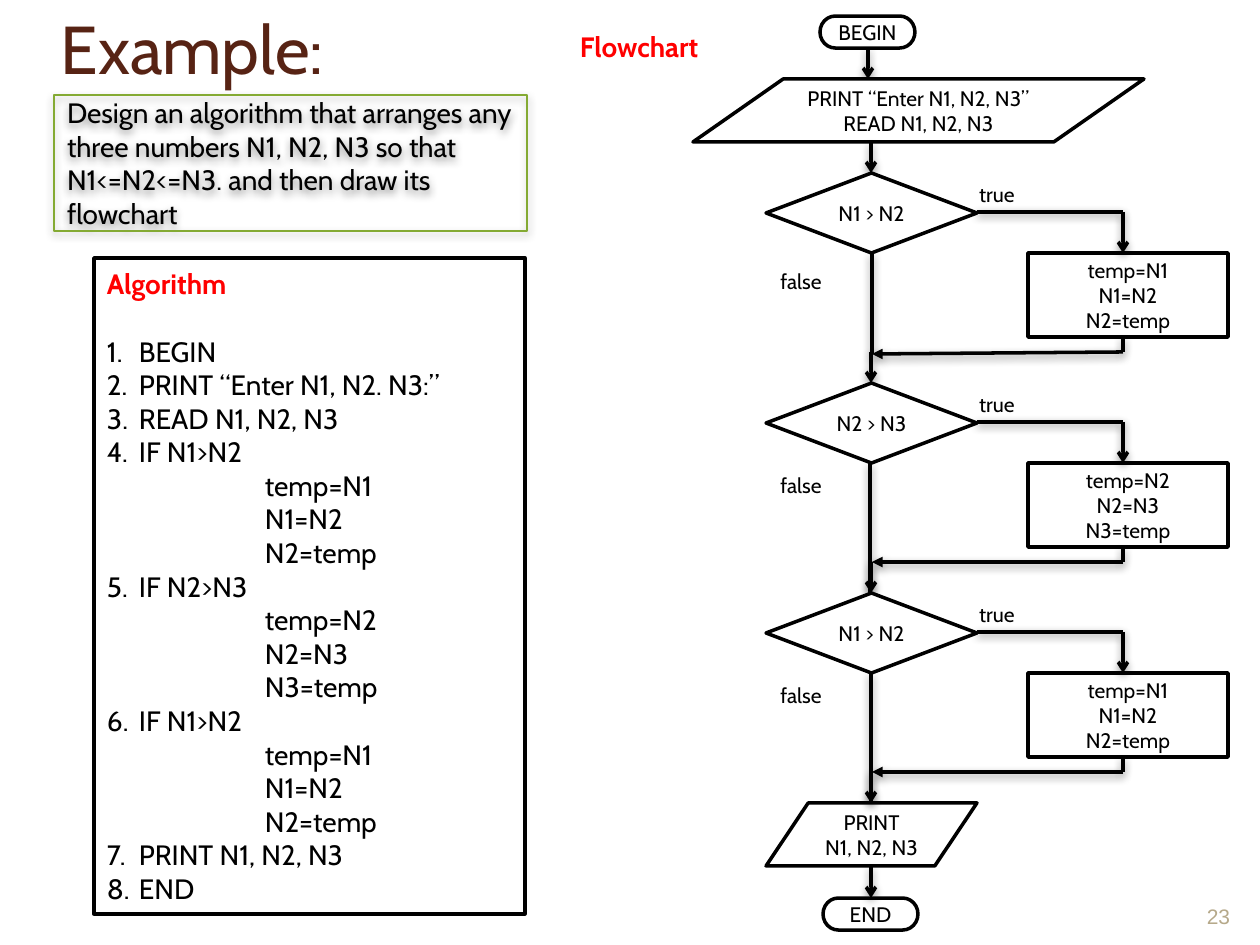
from dataclasses import dataclass

from lxml import etree
from pptx import Presentation
from pptx import util as u
from pptx.dml.color import RGBColor
from pptx.enum import shapes, text
from pptx.oxml.ns import qn

SCALE = u.Inches(1) / 126
BLACK, WHITE, RED = "000000", "FFFFFF", "FF0000"
LEFT, CENTER = text.PP_ALIGN.LEFT, text.PP_ALIGN.CENTER
MIDDLE, BOTTOM = text.MSO_ANCHOR.MIDDLE, text.MSO_ANCHOR.BOTTOM
KIND = shapes.MSO_SHAPE
STEM_X, RETURN_X = 871, 1123
BRANCH_TOP, BRANCH_STEP = 173, 210


@dataclass
class Area:
    left: int
    top: int
    width: int
    height: int


@dataclass
class Style:
    size: float = 12
    color: str = BLACK
    bold: bool = False
    font: str = "Cabin"


@dataclass
class Branch:
    test: str
    swap: list[str]
    false_top: int
    stem_x: int
    stem_end: int
    merge_drop: int


BRANCHES = [
    Branch("N1 > N2", ["temp=N1", "N1=N2", "N2=temp"], 260, 872, 354, 2),
    Branch("N2 > N3", ["temp=N2", "N2=N3", "N3=temp"], 464, 870, 603, 0),
    Branch("N1 > N2", ["temp=N1", "N1=N2", "N2=temp"], 674, 871, 803, 0),
]


def px(length: int) -> u.Emu:
    return u.Emu(round(length * SCALE))


def rgb(color: str) -> RGBColor:
    return RGBColor.from_string(color)


def place(area: Area) -> list[u.Emu]:
    return [px(n) for n in (area.left, area.top, area.width, area.height)]


def add_run(para, words: str, style: Style) -> None:
    span = para.add_run()
    span.text = words
    span.font.name = style.font
    span.font.size = u.Pt(style.size)
    span.font.bold = style.bold
    span.font.color.rgb = rgb(style.color)


def write(box, lines: list[str], style: Style, align=CENTER, anchor=MIDDLE, inset: int = 0) -> None:
    frame = box.text_frame
    frame.word_wrap = True
    frame.vertical_anchor = anchor
    frame.margin_left = frame.margin_right = px(inset)
    for index, line in enumerate(lines):
        para = frame.add_paragraph() if index else frame.paragraphs[0]
        para.alignment = align
        add_run(para, line, style)


def add_label(page, area: Area, words: str, style: Style, align=CENTER, anchor=MIDDLE, inset: int = 0) -> None:
    write(page.shapes.add_textbox(*place(area)), [words], style, align, anchor, inset)


def add_node(page, kind, area: Area, lines: list[str], style: Style = Style(), align=CENTER, inset: int = 0):
    node = page.shapes.add_shape(kind, *place(area))
    node.shadow.inherit = False
    node.fill.solid()
    node.fill.fore_color.rgb = rgb(WHITE)
    node.line.color.rgb = rgb(BLACK)
    node.line.width = u.Pt(2)
    write(node, lines, style, align, inset=inset)
    return node


def add_shadow(item) -> None:
    properties = item._element.spPr
    for old in properties.findall(qn("a:effectLst")):
        properties.remove(old)
    effects = etree.SubElement(properties, qn("a:effectLst"))
    shadow = etree.SubElement(effects, qn("a:outerShdw"), blurRad=str(u.Pt(5)), dist=str(u.Pt(2)),
                              dir="5400000", rotWithShape="0")
    color = etree.SubElement(shadow, qn("a:srgbClr"), val=BLACK)
    etree.SubElement(color, qn("a:alpha"), val="43000")


def add_line(page, start: tuple[int, int], end: tuple[int, int], head: str = "") -> None:
    line = page.shapes.add_connector(shapes.MSO_CONNECTOR.STRAIGHT, *map(px, start + end))
    line.line.color.rgb = rgb(BLACK)
    line.line.width = u.Pt(2)
    if head:
        etree.SubElement(line.line._get_or_add_ln(), qn("a:tailEnd"), type=head)
    add_shadow(line)


def add_branch(page, branch: Branch, top: int) -> None:
    turn, swap_top, merge = top + 39, top + 80, top + 179
    add_node(page, KIND.FLOWCHART_PROCESS, Area(1028, swap_top, 200, 84), branch.swap)
    add_node(page, KIND.FLOWCHART_DECISION, Area(766, top, 211, 80), [branch.test])
    add_line(page, (RETURN_X, turn), (977, turn))
    add_line(page, (RETURN_X, turn), (RETURN_X, swap_top), "arrow")
    add_line(page, (RETURN_X, merge), (872, merge + branch.merge_drop), "triangle")
    add_line(page, (RETURN_X, swap_top + 84), (RETURN_X, merge))
    add_line(page, (branch.stem_x, swap_top), (branch.stem_x, branch.stem_end))
    add_line(page, (STEM_X, merge), (STEM_X, top + BRANCH_STEP), "arrow")
    add_label(page, Area(934, top, 126, 42), "true", Style())
    add_label(page, Area(738, branch.false_top, 126, 42), "false", Style())


def add_flowchart(page) -> None:
    add_label(page, Area(567, 15, 220, 63), "Flowchart", Style(16, RED, True), LEFT, inset=13)
    add_node(page, KIND.FLOWCHART_TERMINATOR, Area(820, 16, 95, 32), ["BEGIN"])
    add_node(page, KIND.FLOWCHART_TERMINATOR, Area(823, 898, 95, 32), ["END"])
    add_line(page, (868, 48), (868, 79), "arrow")
    add_node(page, KIND.FLOWCHART_DATA, Area(693, 79, 451, 63),
             ["PRINT “Enter N1, N2, N3”", "READ N1, N2, N3"])
    add_line(page, (STEM_X, 142), (STEM_X, BRANCH_TOP), "arrow")
    add_node(page, KIND.FLOWCHART_DATA, Area(766, 803, 211, 63), ["PRINT", "N1, N2, N3"])
    add_line(page, (STEM_X, 866), (STEM_X, 898), "arrow")
    for index, branch in enumerate(BRANCHES):
        add_branch(page, branch, BRANCH_TOP + index * BRANCH_STEP)


def add_algorithm(page) -> None:
    box = add_node(page, KIND.RECTANGLE, Area(94, 258, 431, 656), ["Algorithm"],
                   Style(16, RED, True), LEFT, 13)
    box.text_frame.paragraphs[0].space_after = u.Pt(19.2)
    steps = [("BEGIN", []), ("PRINT “Enter N1, N2. N3:”", []), ("READ N1, N2, N3", [])]
    steps += [("IF " + branch.test.replace(" ", ""), branch.swap) for branch in BRANCHES]
    steps += [("PRINT N1, N2, N3", []), ("END", [])]
    for number, (step, actions) in enumerate(steps, 1):
        for words in [step, *actions]:
            para = box.text_frame.add_paragraph()
            para.alignment = LEFT
            settings = para._p.get_or_add_pPr()
            if words == step:
                settings.set("marL", str(px(32)))
                settings.set("indent", str(-px(32)))
                etree.SubElement(settings, qn("a:buFont"), typeface="+mj-lt")
                etree.SubElement(settings, qn("a:buAutoNum"), type="arabicPeriod", startAt=str(number))
            else:
                settings.set("marL", str(px(158)))
            add_run(para, words, Style(16))


def add_task(page) -> None:
    task = ("Design an algorithm that arranges any three numbers N1, N2, N3 "
            "so that N1<=N2<=N3. and then draw its flowchart")
    box = add_node(page, KIND.RECTANGLE, Area(54, 95, 473, 136), [task], Style(16), LEFT, 13)
    box.fill.background()
    box.line.color.rgb = rgb("84AA33")
    box.line.width = u.Pt(0.75)
    add_shadow(box)


def main() -> None:
    deck = Presentation()
    deck.slide_width, deck.slide_height = px(1260), px(945)
    page = deck.slides.add_slide(deck.slide_layouts[6])
    add_label(page, Area(1187, 869, 63, 66), "23", Style(12, "B6A98A", font="Arial"), anchor=BOTTOM)
    add_flowchart(page)
    add_algorithm(page)
    add_task(page)
    add_label(page, Area(48, 0, 582, 95), "Example:", Style(38.7, "572314"), LEFT, inset=13)
    deck.save("out.pptx")


if __name__ == "__main__":
    main()
